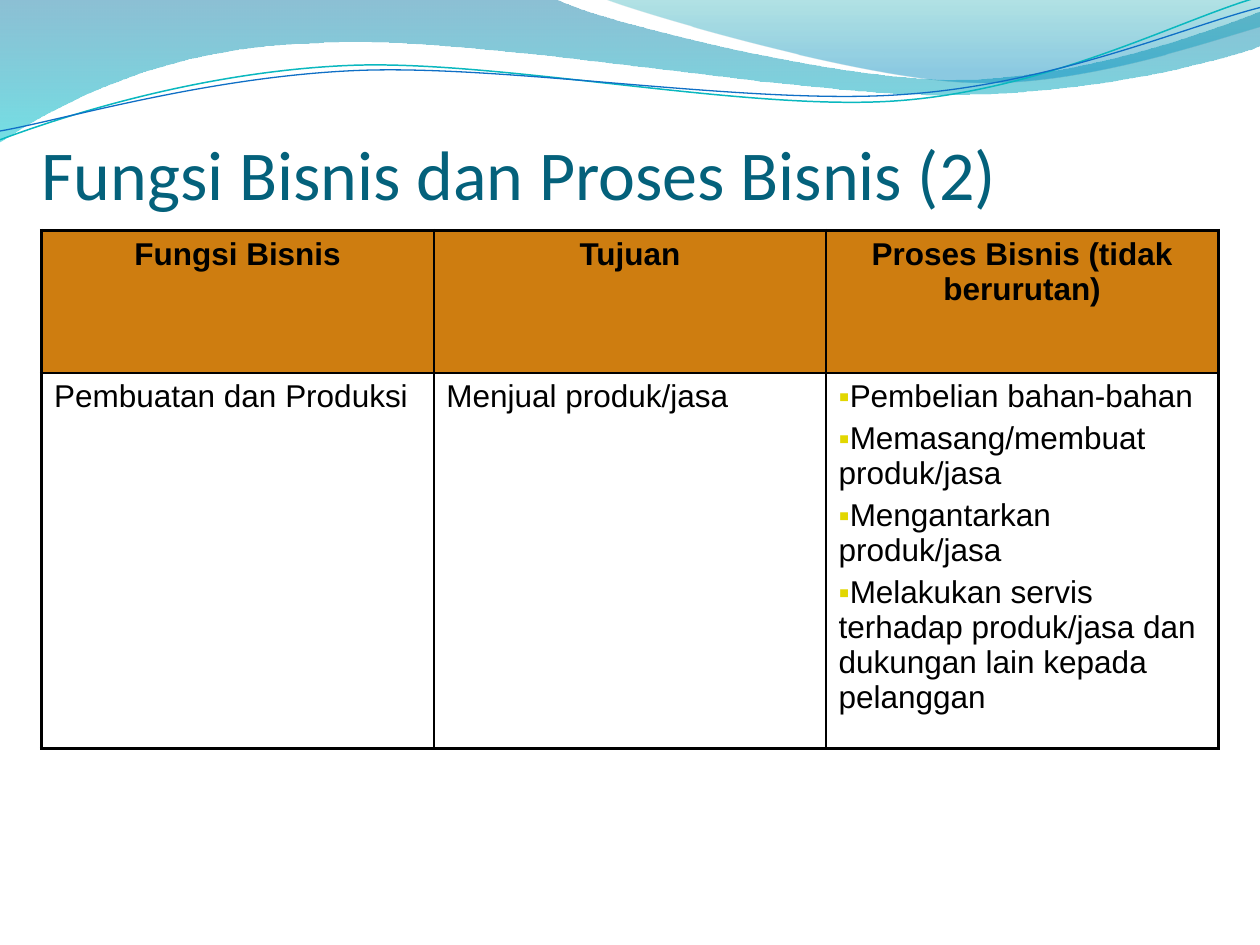
from lxml import etree
from pptx import Presentation
from pptx.dml.color import RGBColor
from pptx.enum.text import MSO_ANCHOR, MSO_AUTO_SIZE, PP_ALIGN
from pptx.oxml import parse_xml
from pptx.oxml.ns import qn
from pptx.util import Inches, Pt

BOTTOM, NO_FIT = MSO_ANCHOR.BOTTOM, MSO_AUTO_SIZE.NONE
LEFT, CENTER = PP_ALIGN.LEFT, PP_ALIGN.CENTER
NS = 'xmlns:a="http://schemas.openxmlformats.org/drawingml/2006/main"'


def rgb(code):
    return RGBColor.from_string(code)


def draw(start, parts, closed):
    """Outline of straight parts (one point) and Bezier parts (three points)."""
    pen = slide.shapes.build_freeform(
        Inches(start[0]), Inches(start[1]), scale=1.0)
    pen.add_line_segments(
        [(Inches(x), Inches(y)) for part in parts for x, y in part], close=closed)
    shape = pen.convert_to_shape()
    shape.shadow.inherit = False
    lines = iter(list(shape.element.iter(qn("a:lnTo"))))
    for part in parts:
        first = next(lines)
        if len(part) == 3:
            first.tag = qn("a:cubicBezTo")
            for _ in range(2):
                line = next(lines)
                first.append(line[0])
                line.getparent().remove(line)
    return shape


prs = Presentation()
prs.slide_width, prs.slide_height = Inches(10), Inches(7.5)
slide = prs.slides.add_slide(prs.slide_layouts[5])
title = slide.shapes.title

# Waves: start, parts, gradient stops (position, colour, opacity)
waves = [
    ((0, 0), [
        [(4.4, -0.01)],
        [(4.76, 0.17), (6.64, 0.63), (7.58, 0.63)],
        [(8.53, 0.63), (9.58, 0.26), (10, 0.09)],
        [(10.01, 0.36)],
        [(9.83, 0.44), (8.7, 0.76), (7.46, 0.75)],
        [(6.22, 0.75), (3.82, 0.28), (2.57, 0.34)],
        [(1.29, 0.36), (0.46, 0.83), (-0.01, 1.13)],
    ], [(0, "0074A1", 45), (100, "00C6CF", 55)]),
    ((4.79, -0.01), [
        [(5.09, 0.11), (6.82, 0.62), (7.69, 0.65)],
        [(8.56, 0.69), (9.61, 0.32), (10, 0.21)],
        [(10, 0)],
    ], [(0, "00A1A9", 30), (80, "008BBF", 45)]),
]
for start, parts, stops in waves:
    wave = draw(start, parts, True)
    wave.line.fill.background()
    marks = "".join(
        f'<a:gs pos="{pos * 1000}"><a:srgbClr val="{color}">'
        f'<a:alpha val="{alpha * 1000}"/></a:srgbClr></a:gs>'
        for pos, color, alpha in stops)
    grad = parse_xml(f'<a:gradFill {NS}><a:gsLst>{marks}</a:gsLst>'
                     '<a:lin ang="5400000" scaled="0"/></a:gradFill>')
    wave.element.spPr.find(qn("a:custGeom")).addnext(grad)

# Thin curves: start, parts, colour, width
curves = [
    ((0, 1.11), [
        [(0.48, 0.93), (1.58, 0.57), (2.77, 0.52)],
        [(3.95, 0.47), (5.93, 0.89), (7.13, 0.8)],
        [(8.33, 0.71), (9.38, 0.15), (9.98, -0.02)],
    ], "0AB8BF", 0.85),
    ((0, 1.04), [
        [(0.47, 0.96), (1.64, 0.61), (2.83, 0.56)],
        [(4.03, 0.51), (5.97, 0.84), (7.17, 0.75)],
        [(8.36, 0.67), (9.41, 0.21), (10, 0.06)],
    ], "0F6FC6", 0.75),
]
for start, parts, color, width in curves:
    curve = draw(start, parts, False)
    curve.fill.background()
    curve.line.color.rgb = rgb(color)
    curve.line.width = Pt(width)

# Title
title.left, title.top = Inches(0.33), Inches(0.25)
title.width, title.height = Inches(9.31), Inches(1.45)
frame = title.text_frame
frame.text = "Fungsi Bisnis dan Proses Bisnis (2)"
frame.auto_size, frame.vertical_anchor = NO_FIT, BOTTOM
frame.margin_left = frame.margin_right = frame.margin_bottom = 0
frame.margin_top = Inches(0.05)
head = frame.paragraphs[0]
head.alignment = LEFT
head.font.name, head.font.size = "Calibri", Pt(40)
head.font.color.rgb = rgb("04617B")

# Table
rows = [
    ["Fungsi Bisnis", "Tujuan", "Proses Bisnis (tidak berurutan)"],
    ["Pembuatan dan Produksi", "Menjual produk/jasa",
     "Pembelian bahan-bahan\nMemasang/membuat produk/jasa\n"
     "Mengantarkan produk/jasa\nMelakukan servis terhadap produk/jasa "
     "dan dukungan lain kepada pelanggan"],
]
table = slide.shapes.add_table(
    2, 3, Inches(0.33), Inches(1.83), Inches(9.34), Inches(4.11)).table
table.first_row = table.horz_banding = False
for row, height in zip(table.rows, (1.13, 2.98)):
    row.height = Inches(height)

for r, texts in enumerate(rows):
    for c, text in enumerate(texts):
        cell = table.cell(r, c)
        cell.text = text
        if r == 0:
            cell.fill.solid()
            cell.fill.fore_color.rgb = rgb("CE7D10")
        else:
            cell.fill.background()
        props = cell._tc.get_or_add_tcPr()
        outer = {"L": c == 0, "R": c == 2, "T": r == 0, "B": r == 1}
        for i, (side, thick) in enumerate(outer.items()):
            props.insert(i, parse_xml(
                f'<a:ln{side} {NS} w="{Pt(2.25 if thick else 1)}"><a:solidFill>'
                f'<a:srgbClr val="000000"/></a:solidFill></a:ln{side}>'))
        for para in cell.text_frame.paragraphs:
            para.alignment = CENTER if r == 0 else LEFT
            para.font.name, para.font.size = "Arial", Pt(18)
            para.font.bold = r == 0
            para.font.color.rgb = rgb("000000")
            ppr = para._p.get_or_add_pPr()
            space = etree.Element(qn("a:spcBef"))
            etree.SubElement(space, qn("a:spcPct"), val="20000")
            ppr.insert(0, space)
            if (r, c) == (1, 2):
                ppr.set("marL", "0")
                ppr.set("indent", "0")
                tint = etree.Element(qn("a:buClr"))
                etree.SubElement(tint, qn("a:srgbClr"), val="E2D700")
                face = etree.Element(qn("a:buFont"), typeface="Arial")
                mark = etree.Element(qn("a:buChar"), char="▪")
                for i, item in enumerate((tint, face, mark), 1):
                    ppr.insert(i, item)

prs.save("out.pptx")
